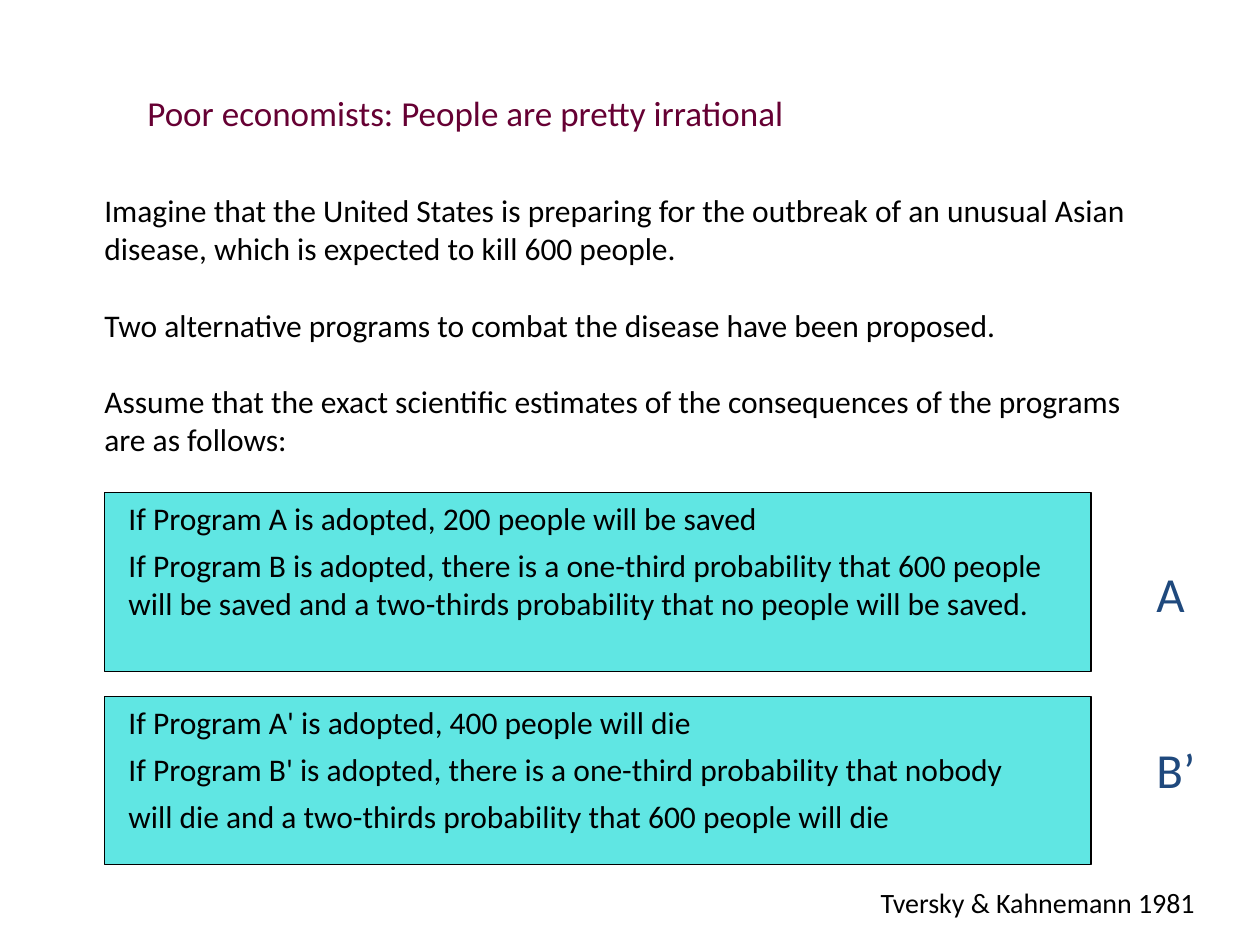
import pptx
import pptx.dml.color
import pptx.enum.shapes
import pptx.enum.text
import pptx.util
from pptx.util import Inches

FONT = "Calibri"
BLACK = "000000"
NAVY = "1F497D"
PLUM = "660033"
TURQUOISE = "60E6E3"


def color(hex_value):
    return pptx.dml.color.RGBColor.from_string(hex_value)


def write_paragraphs(frame, texts, size, text_color, gap=0,
                     alignment=pptx.enum.text.PP_ALIGN.LEFT):
    """Fill a text frame, with gap points between its paragraphs."""
    frame.vertical_anchor = pptx.enum.text.MSO_ANCHOR.TOP
    for index, text in enumerate(texts):
        paragraph = frame.add_paragraph() if index else frame.paragraphs[0]
        paragraph.text = text
        paragraph.alignment = alignment
        if index:
            paragraph.space_before = pptx.util.Pt(gap)
        paragraph.font.name = FONT
        paragraph.font.size = pptx.util.Pt(size)
        paragraph.font.color.rgb = color(text_color)


def place_title(slide, box, text):
    title = slide.shapes.title
    title.left, title.top, title.width, title.height = map(Inches, box)
    title.text_frame.word_wrap = True
    title.text_frame.auto_size = pptx.enum.text.MSO_AUTO_SIZE.NONE
    write_paragraphs(title.text_frame, [text], 20, PLUM,
                     alignment=pptx.enum.text.PP_ALIGN.CENTER)


def add_text(slide, box, texts, size, text_color, gap=0, wrap=False):
    text_box = slide.shapes.add_textbox(*map(Inches, box))
    text_box.text_frame.word_wrap = wrap
    write_paragraphs(text_box.text_frame, texts, size, text_color, gap)


def add_program_panel(slide, box, texts):
    panel = slide.shapes.add_shape(
        pptx.enum.shapes.MSO_SHAPE.RECTANGLE, *map(Inches, box))
    panel.shadow.inherit = False
    panel.fill.solid()
    panel.fill.fore_color.rgb = color(TURQUOISE)
    panel.line.color.rgb = color(BLACK)
    panel.line.width = pptx.util.Pt(0.75)
    frame = panel.text_frame
    frame.word_wrap = True
    frame.margin_left = Inches(0.19)
    frame.margin_right = Inches(0.25)
    write_paragraphs(frame, texts, 18, BLACK, gap=5.4)


def build_slide(presentation):
    slide = presentation.slides.add_slide(presentation.slide_layouts[5])
    place_title(slide, (0.35, 0.68, 6.69, 0.47),
                "Poor economists: People are pretty irrational")
    add_text(slide, (0.73, 1.47, 8.6, 2.89), [
        "Imagine that the United States is preparing for the outbreak of an "
        "unusual Asian disease, which is expected to kill 600 people.",
        "Two alternative programs to combat the disease have been proposed.",
        "Assume that the exact scientific estimates of the consequences of "
        "the programs are as follows:",
    ], 18, BLACK, gap=22, wrap=True)
    add_program_panel(slide, (0.83, 3.91, 7.83, 1.42), [
        "If Program A is adopted, 200 people will be saved",
        "If Program B is adopted, there is a one-third probability that 600 "
        "people will be saved and a two-thirds probability that no people "
        "will be saved.",
    ])
    add_program_panel(slide, (0.83, 5.53, 7.83, 1.33), [
        "If Program A' is adopted, 400 people will die",
        "If Program B' is adopted, there is a one-third probability that nobody",
        "will die and a two-thirds probability that 600 people will die",
    ])
    add_text(slide, (9.08, 4.42, 0.46, 0.57), ["A"], 28, NAVY)
    add_text(slide, (9.08, 5.82, 0.55, 0.57), ["B’"], 28, NAVY)
    add_text(slide, (6.89, 6.98, 3, 0.37), ["Tversky & Kahnemann 1981"],
             16, BLACK)


def main():
    presentation = pptx.Presentation()
    presentation.slide_width = Inches(10)
    presentation.slide_height = Inches(7.5)
    build_slide(presentation)
    presentation.save("out.pptx")


if __name__ == "__main__":
    main()
